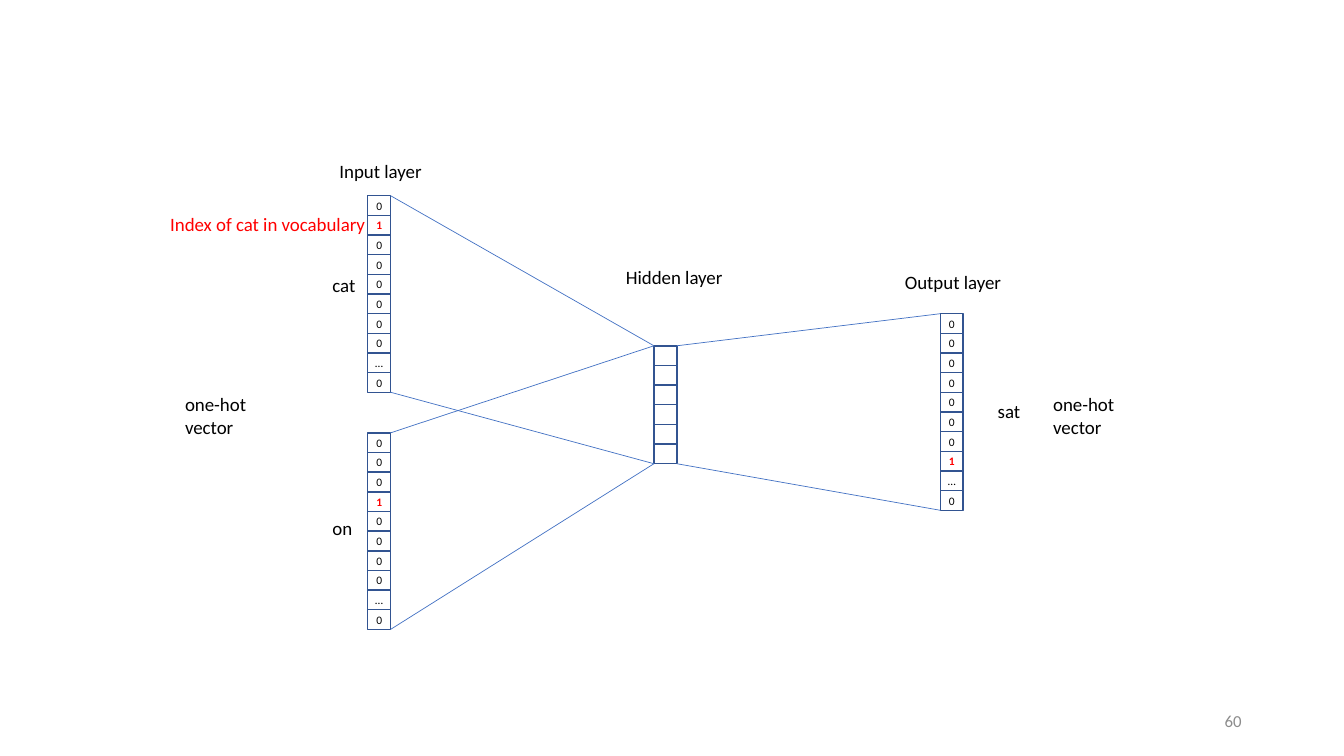
from dataclasses import dataclass

from lxml.etree import SubElement
from pptx import Presentation
from pptx.dml.color import RGBColor
from pptx.enum.shapes import MSO_CONNECTOR as Connector, MSO_SHAPE as Shape
from pptx.enum.text import MSO_ANCHOR as Anchor, MSO_AUTO_SIZE as AutoSize, PP_ALIGN as Align
from pptx.oxml.ns import qn
from pptx.util import Pt

COLORS = {
    "text": "000000",
    "hot": "FF0000",
    "cell": "325491",
    "link": "4472C4",
    "number": "8C8C8C",
}
CELL_WIDTH = 16.4
CELL_HEIGHT = 14.04
INPUT_LEFT, HIDDEN_LEFT, OUTPUT_LEFT = (262.6 + 204.5 * layer for layer in range(3))


@dataclass
class Vector:
    """Outline of one drawn column of cells."""

    left: float
    top: float
    count: int

    @property
    def right(self):
        return self.left + CELL_WIDTH

    @property
    def bottom(self):
        return self.top + CELL_HEIGHT * self.count


class NetworkSlide:
    """Draws the parts of a network diagram in one shared style."""

    def __init__(self, slide, font="Calibri", label_size=13.5, cell_size=8.2):
        self.slide = slide
        self.font = font
        self.label_size = label_size
        self.cell_size = cell_size

    def run(self, paragraph, text, size, color, bold=False):
        run = paragraph.add_run()
        run.text = text
        run.font.name = self.font
        run.font.size = Pt(size)
        run.font.bold = bold
        run.font.color.rgb = RGBColor.from_string(COLORS[color])

    def label(self, lines, left, top, width, color="text"):
        height = 7.2 + 16.5 * len(lines)
        box = self.slide.shapes.add_textbox(Pt(left), Pt(top), Pt(width), Pt(height))
        frame = box.text_frame
        frame.word_wrap = False
        frame.auto_size = AutoSize.SHAPE_TO_FIT_TEXT
        for index, line in enumerate(lines):
            paragraph = frame.add_paragraph() if index else frame.paragraphs[0]
            self.run(paragraph, line, self.label_size, color)

    def page_number(self, text):
        box = self.slide.shapes.add_textbox(Pt(678), Pt(500.5), Pt(216), Pt(28.75))
        frame = box.text_frame
        frame.word_wrap = True
        frame.vertical_anchor = Anchor.MIDDLE
        frame.paragraphs[0].alignment = Align.RIGHT
        self.run(frame.paragraphs[0], text, 12, "number")

    def cell(self, group, left, top, text):
        shape = group.shapes.add_shape(
            Shape.RECTANGLE, Pt(left), Pt(top), Pt(CELL_WIDTH), Pt(CELL_HEIGHT)
        )
        shape.shadow.inherit = False
        shape.fill.background()
        shape.line.color.rgb = RGBColor.from_string(COLORS["cell"])
        shape.line.width = Pt(1)
        if text:
            frame = shape.text_frame
            frame.margin_left = frame.margin_right = frame.margin_top = frame.margin_bottom = 0
            frame.word_wrap = False
            frame.vertical_anchor = Anchor.MIDDLE
            frame.paragraphs[0].alignment = Align.CENTER
            hot = text == "1"
            self.run(frame.paragraphs[0], text, self.cell_size, "hot" if hot else "text", hot)

    def vector(self, left, top, values):
        group = self.slide.shapes.add_group_shape()
        for row, value in enumerate(values):
            self.cell(group, left, top + row * CELL_HEIGHT, value)
        return Vector(left, top, len(values))

    def line(self, start_x, start_y, end_x, end_y):
        connector = self.slide.shapes.add_connector(
            Connector.STRAIGHT, Pt(start_x), Pt(start_y), Pt(end_x), Pt(end_y)
        )
        connector.line.color.rgb = RGBColor.from_string(COLORS["link"])
        connector.line.width = Pt(0.5)
        SubElement(connector._element.spPr, qn("a:effectLst"))

    def link(self, source, target):
        self.line(source.right, source.top, target.left, target.top)
        self.line(source.right, source.bottom, target.left, target.bottom)


def one_hot(position):
    """Return ten cell texts with a 1 at the position and an ellipsis before the last."""
    values = ["0"] * 10
    values[position] = "1"
    values[8] = "…"
    return values


def main():
    presentation = Presentation()
    presentation.slide_width = Pt(960)
    presentation.slide_height = Pt(540)
    network = NetworkSlide(presentation.slides.add_slide(presentation.slide_layouts[6]))

    cat = network.vector(INPUT_LEFT, 139.8, one_hot(1))
    on = network.vector(INPUT_LEFT, 309.2, one_hot(3))
    hidden = network.vector(HIDDEN_LEFT, 247, [""] * 6)
    sat = network.vector(OUTPUT_LEFT, 224.1, one_hot(7))
    for source, target in ((cat, hidden), (on, hidden), (hidden, sat)):
        network.link(source, target)

    network.label(["Input layer"], 235.4, 110.4, 74)
    network.label(["Hidden layer"], 440, 186.4, 85)
    network.label(["Output layer"], 639.3, 190.1, 84.2)
    network.label(["cat"], 230.4, 192.2, 31)
    network.label(["on"], 230.4, 365.8, 28.8)
    network.label(["sat"], 705.6, 282.2, 31)
    for left in (125.1, 745.2):
        network.label(["one-hot", "vector"], left, 277.2, 59)
    network.label(["Index of cat in vocabulary"], 114.5, 148.3, 156.2, "hot")
    network.page_number("60")

    presentation.save("out.pptx")


if __name__ == "__main__":
    main()
